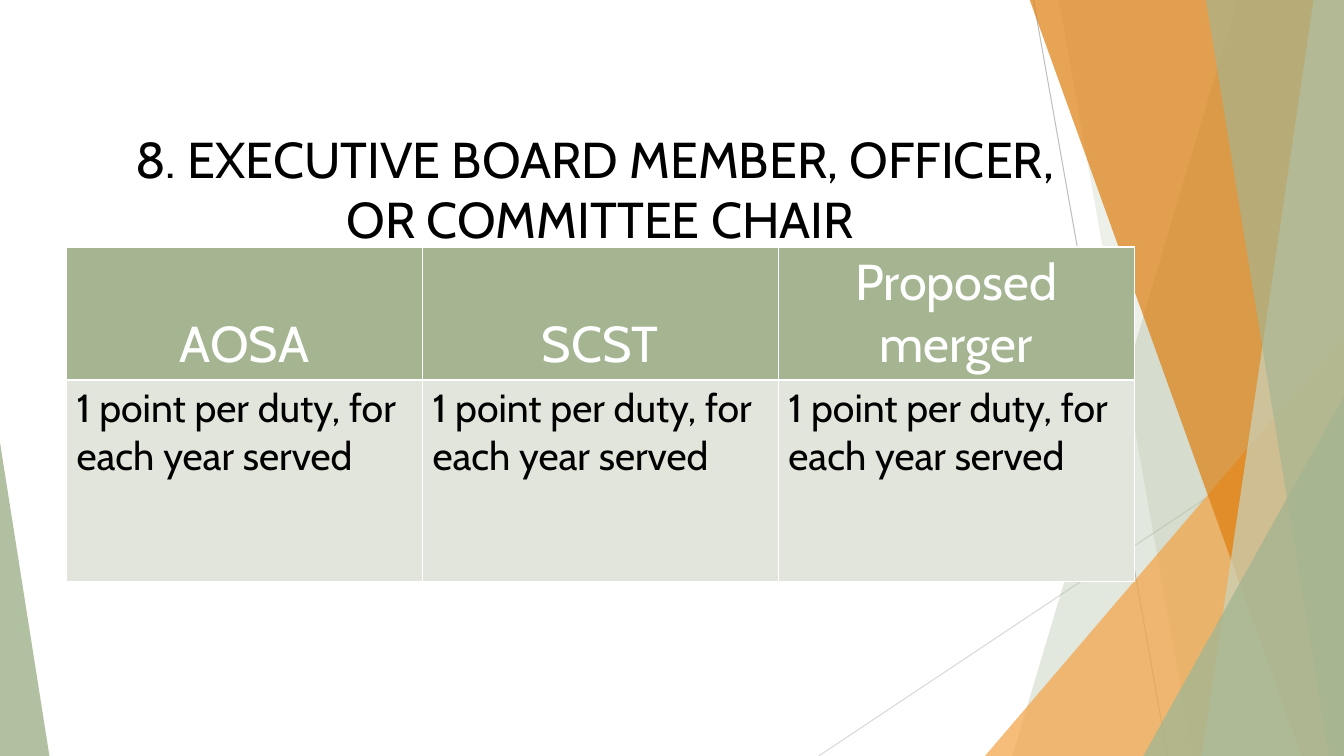
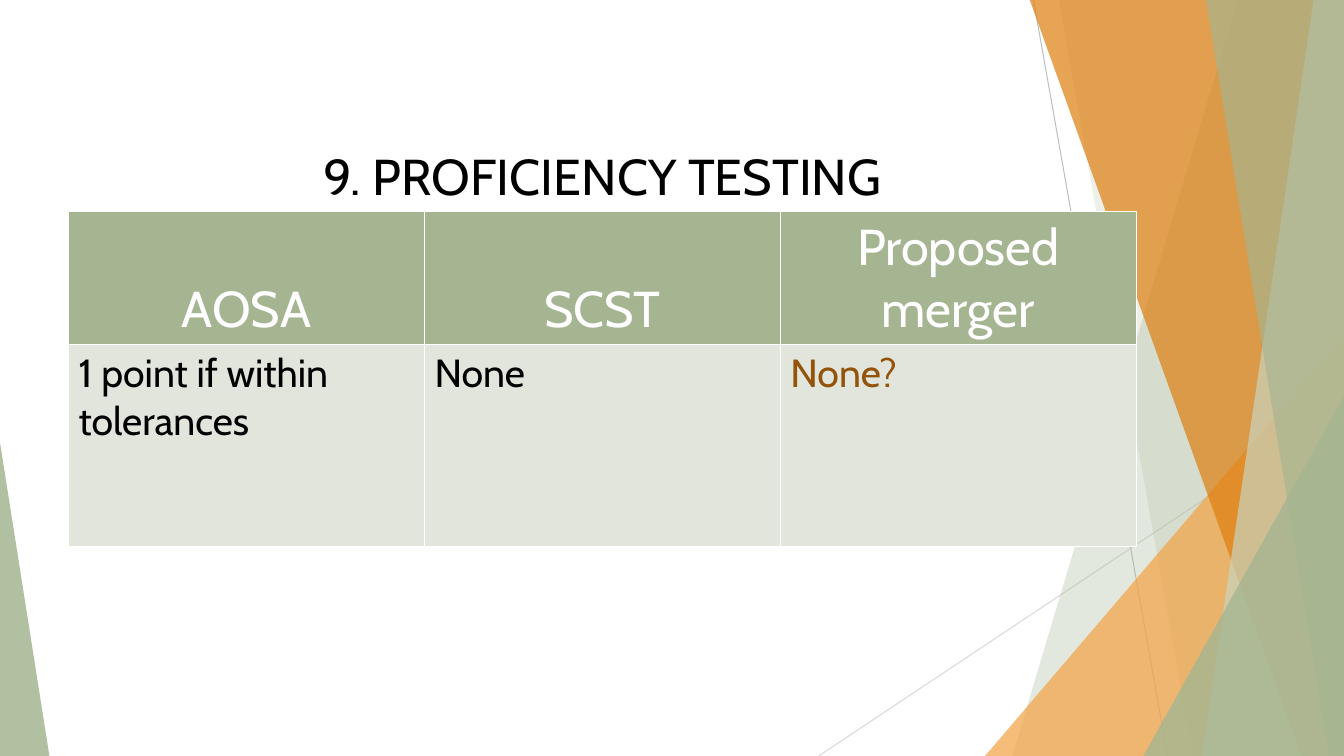
from dataclasses import dataclass
from lxml import etree
from pptx import Presentation
from pptx.dml.color import RGBColor
from pptx.enum.shapes import MSO_CONNECTOR, MSO_SHAPE
from pptx.enum.text import MSO_ANCHOR, PP_ALIGN
from pptx.oxml.ns import qn
from pptx.util import Inches, Pt

LINE = MSO_CONNECTOR.STRAIGHT
PEAK = MSO_SHAPE.ISOSCELES_TRIANGLE
CENTER, LEFT = PP_ALIGN.CENTER, PP_ALIGN.LEFT
BOTTOM, TOP = MSO_ANCHOR.BOTTOM, MSO_ANCHOR.TOP


@dataclass(frozen=True)
class Theme:
    font: str = "Cabin"
    large: int = 36
    body: int = 28
    black: str = "000000"
    white: str = "FFFFFF"
    sage: str = "A5B592"
    mist: str = "C9D3BE"
    pale: str = "E1E5DC"
    amber: str = "F3A447"
    orange: str = "DD7E0E"
    brown: str = "93540A"
    gray: str = "BFBFBF"
    silver: str = "D9D9D9"


theme = Theme()
WIDE, HIGH = 13.33, 7.5
COL, HEAD, BODY = 3.53, 1.32, 2


def paint(shape, color, alpha):
    """Give a shape a see-through fill, no outline and no shadow."""
    shape.shadow.inherit = False
    shape.line.fill.background()
    shape.fill.solid()
    shape.fill.fore_color.rgb = RGBColor.from_string(color)
    tint = shape.element.spPr.find(qn("a:solidFill"))[0]
    etree.SubElement(tint, qn("a:alpha"), val=str(alpha * 1000))


def style(par, size, color, align):
    par.alignment = align
    par.font.name = theme.font
    par.font.size = Pt(size)
    par.font.bold = False
    par.font.color.rgb = RGBColor.from_string(color)


deck = Presentation()
deck.slide_width, deck.slide_height = Inches(WIDE), Inches(HIGH)
blank = deck.slide_layouts[6]
for holder in list(blank.placeholders):
    holder.element.getparent().remove(holder.element)

# Shared backdrop: drawn on the first slide, then moved to the layout
first = deck.slides.add_slide(blank)
shapes = first.shapes

rules = [
    (10.25, 0, 11.58, HIGH, theme.gray),
    (WIDE, 4.03, 8.12, HIGH, theme.silver),
]
for x1, y1, x2, y2, color in rules:
    rule = shapes.add_connector(LINE, Inches(x1), Inches(y1), Inches(x2), Inches(y2))
    rule.line.width = Pt(0.75)
    rule.line.color.rgb = RGBColor.from_string(color)
    etree.SubElement(rule.element.spPr, qn("a:effectLst"))

# Bands reach the right edge: x at the top, x at the foot
# Peaks stand on the lower edge: left, top, width, apex
parts = [
    ("band", (12.28, 10.04), theme.sage, 30),
    ("band", (10.5, 11.83), theme.sage, 20),
    ("peak", (9.77, 3.33, 3.56, 1), theme.amber, 72),
    ("band", (10.21, 12.91), theme.orange, 70),
    ("band", (13.03, 11.92), theme.mist, 70),
    ("band", (11.96, 13.18), theme.sage, 65),
    ("peak", (11.34, 3.93, 1.99, 1), theme.sage, 80),
    ("peak", (0, 4.39, 0.49, 0), theme.sage, 85),
]
for kind, place, color, alpha in parts:
    if kind == "band":
        head, foot = place
        edge = [(WIDE, -0.01), (WIDE, HIGH), (foot, HIGH)]
        pen = shapes.build_freeform(Inches(head), Inches(-0.01))
        pen.add_line_segments([(Inches(x), Inches(y)) for x, y in edge])
        part = pen.convert_to_shape()
    else:
        x, y, width, apex = place
        part = shapes.add_shape(PEAK, Inches(x), Inches(y), Inches(width), Inches(HIGH - y))
        part.adjustments[0] = apex
    paint(part, color, alpha)

for part in list(shapes):
    blank.shapes.element.append(part.element)

# Slide content: title lines, title top and height, table left and top, answers
heads = ["AOSA", "SCST", "Proposed\nmerger"]
duty = "1 point per duty, for each year served"
pages = [
    (["8. EXECUTIVE BOARD MEMBER, OFFICER, ", "OR COMMITTEE CHAIR"],
     1.22, 1.31, 0.66, 2.45, [(duty, theme.black)] * 3),
    (["9. PROFICIENCY TESTING"], 1.39, 0.71, 0.68, 2.1,
     [("1 point if within tolerances", theme.black),
      ("None", theme.black), ("None?", theme.brown)]),
]
for index, (lines, high, tall, left, top, answers) in enumerate(pages):
    slide = deck.slides.add_slide(blank) if index else first

    # Table
    frame = slide.shapes.add_table(2, 3, Inches(left), Inches(top),
                                   Inches(3 * COL), Inches(HEAD + BODY))
    table = frame.table
    table.horz_banding = False
    for col in table.columns:
        col.width = Inches(COL)
    rows = [
        (HEAD, [(text, theme.white) for text in heads],
         theme.large, theme.sage, CENTER, BOTTOM),
        (BODY, answers, theme.body, theme.pale, LEFT, TOP),
    ]
    for row, (height, items, size, fill, align, anchor) in zip(table.rows, rows):
        row.height = Inches(height)
        for cell, (text, color) in zip(row.cells, items):
            cell.text = text
            cell.vertical_anchor = anchor
            for par in cell.text_frame.paragraphs:
                style(par, size, color, align)
            # Borders come before the fill in the cell properties
            props = cell._tc.get_or_add_tcPr()
            for side in "LRTB":
                border = etree.SubElement(props, qn("a:ln" + side), w=str(Pt(1)))
                solid = etree.SubElement(border, qn("a:solidFill"))
                etree.SubElement(solid, qn("a:srgbClr"), val=theme.white)
            cell.fill.solid()
            cell.fill.fore_color.rgb = RGBColor.from_string(fill)

    # Title
    title = slide.shapes.add_textbox(Inches(left), Inches(high),
                                     Inches(3 * COL), Inches(tall)).text_frame
    title.word_wrap = True
    title.text = "\n".join(lines)
    for par in title.paragraphs:
        style(par, theme.large, theme.black, CENTER)

deck.save("out.pptx")
